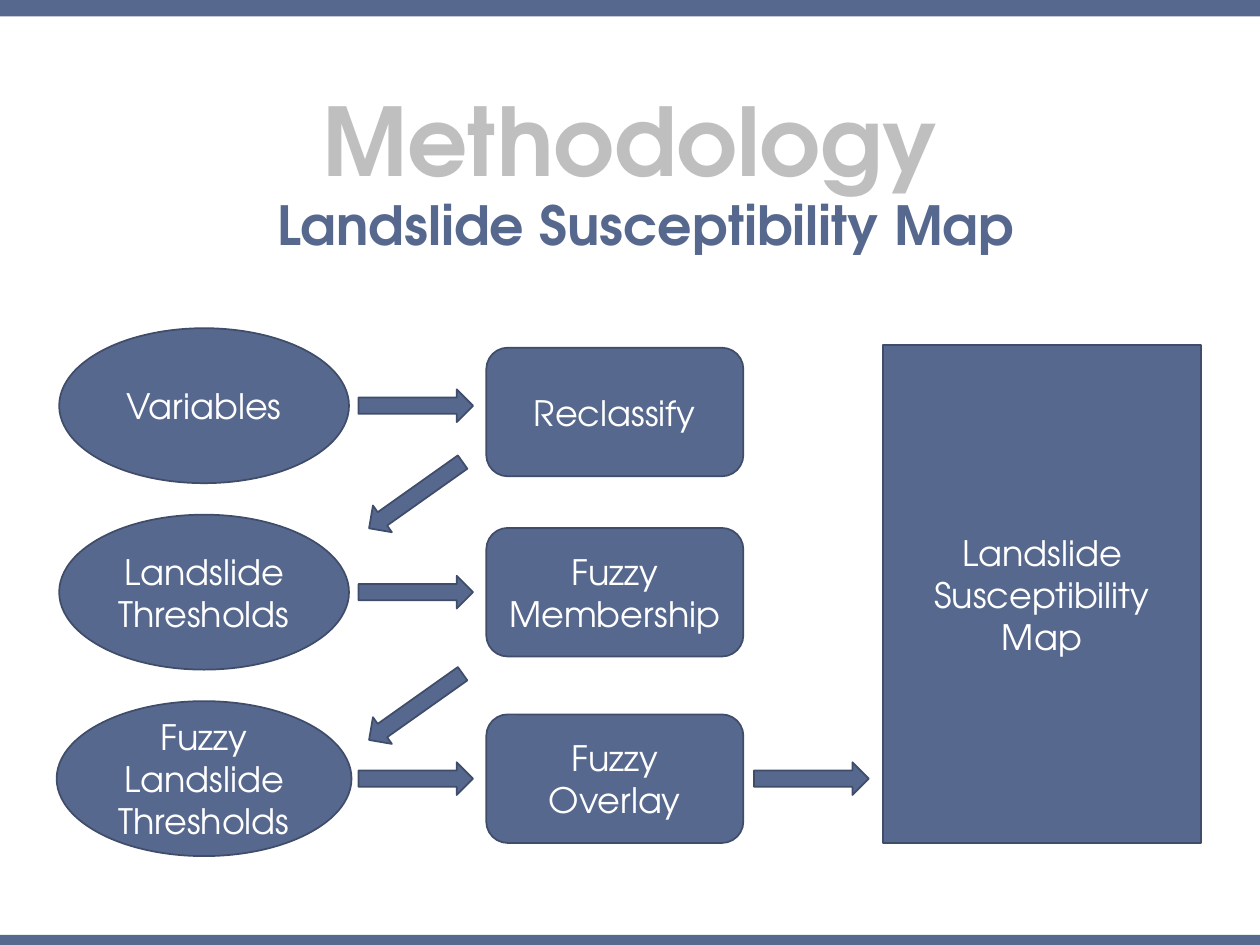
from pptx import Presentation
from pptx.dml.color import RGBColor
from pptx.enum.shapes import MSO_SHAPE as Shape
from pptx.enum.text import MSO_ANCHOR as Anchor, MSO_AUTO_SIZE as AutoSize, PP_ALIGN as Align
from pptx.util import Inches, Pt

FONT = "TeX Gyre Adventor"
BLUE, EDGE, GREY, WHITE = "57688F", "404D6A", "BFBFBF", "FFFFFF"
WIDTH, HEIGHT = 10, 7.5

TITLE = "Methodology"
RESULT = "Landslide Susceptibility Map"
BARS = [(0, 0.13), (7.42, 0.08)]
INPUTS = [("Variables", 2.3), ("Landslide Thresholds", 2.3), ("Fuzzy Landslide Thresholds", 2.34)]
STEPS = [("Reclassify", 3.27), ("Fuzzy Membership", 4.7), ("Fuzzy Overlay", 6.18)]
RETURN_ARROWS = [3.93, 5.61]

ROW_CENTERS = [3.22 + 1.48 * row for row in range(len(INPUTS))]
INPUT_X, STEP_X, RESULT_X = 1.62, 4.88, 8.27
FORWARD_X, FINAL_X = 3.3, 6.44
ARROW_SIZE = (0.91, 0.26)
RETURN_ANGLE = 144.7


def rgb(value):
    """Turn a hex string into a colour."""
    return RGBColor.from_string(value)


def write(shape, text, size, color, align=Align.CENTER, anchor=Anchor.MIDDLE, bold=False, **spacing):
    """Put one formatted paragraph into a shape."""
    frame = shape.text_frame
    for name, value in {"word_wrap": True, "auto_size": AutoSize.NONE, "vertical_anchor": anchor}.items():
        setattr(frame, name, value)
    paragraph = frame.paragraphs[0]
    for name, value in {"alignment": align, **spacing}.items():
        setattr(paragraph, name, value)
    run = paragraph.add_run()
    run.text = text
    for name, value in {"name": FONT, "size": Pt(size), "bold": bold}.items():
        setattr(run.font, name, value)
    run.font.color.rgb = rgb(color)


def add_block(slide, kind, center, size, text="", outlined=True, rotation=0):
    """Add a blue shape around a centre point."""
    (x, y), (width, height) = center, size
    shape = slide.shapes.add_shape(
        kind, Inches(x - width / 2), Inches(y - height / 2), Inches(width), Inches(height))
    shape.shadow.inherit = False
    shape.rotation = rotation
    shape.fill.solid()
    shape.fill.fore_color.rgb = rgb(BLUE)
    if outlined:
        shape.line.color.rgb = rgb(EDGE)
        shape.line.width = Pt(1)
    else:
        shape.line.fill.background()
    if text:
        write(shape, text, 20, WHITE)
    return shape


def add_headings(slide):
    """Fill the title and add the subtitle."""
    title = slide.shapes.title
    box = {"left": 0.35, "top": 0.6, "width": 9.3, "height": 1.01}
    for name, value in box.items():
        setattr(title, name, Inches(value))
    write(title, TITLE, 54, GREY, anchor=Anchor.BOTTOM, bold=True,
          line_spacing=0.9, space_before=Pt(10))
    subtitle = slide.shapes.add_textbox(Inches(1.84), Inches(1.61), Inches(6.31), Inches(0.84))
    write(subtitle, RESULT, 30.8, BLUE, Align.RIGHT, Anchor.TOP, True,
          line_spacing=0.7, space_before=Pt(10))


def add_flow(slide):
    """Draw the inputs, steps, result and arrows."""
    for (text, width), y in zip(INPUTS, ROW_CENTERS):
        add_block(slide, Shape.OVAL, (INPUT_X, y), (width, 1.23), text)
        add_block(slide, Shape.RIGHT_ARROW, (FORWARD_X, y), ARROW_SIZE)
    for text, y in STEPS:
        add_block(slide, Shape.ROUNDED_RECTANGLE, (STEP_X, y), (2.04, 1.02), text)
    for y in RETURN_ARROWS:
        add_block(slide, Shape.RIGHT_ARROW, (FORWARD_X, y), ARROW_SIZE, rotation=RETURN_ANGLE)
    add_block(slide, Shape.RIGHT_ARROW, (FINAL_X, ROW_CENTERS[-1]), ARROW_SIZE)
    add_block(slide, Shape.RECTANGLE, (RESULT_X, 4.715), (2.52, 3.95), RESULT)


def main():
    """Build and save the slide."""
    presentation = Presentation()
    presentation.slide_width, presentation.slide_height = Inches(WIDTH), Inches(HEIGHT)
    slide = presentation.slides.add_slide(presentation.slide_layouts[5])
    for top, height in BARS:
        add_block(slide, Shape.RECTANGLE, (WIDTH / 2, top + height / 2), (WIDTH, height), outlined=False)
    add_headings(slide)
    add_flow(slide)
    presentation.save("out.pptx")


if __name__ == "__main__":
    main()
